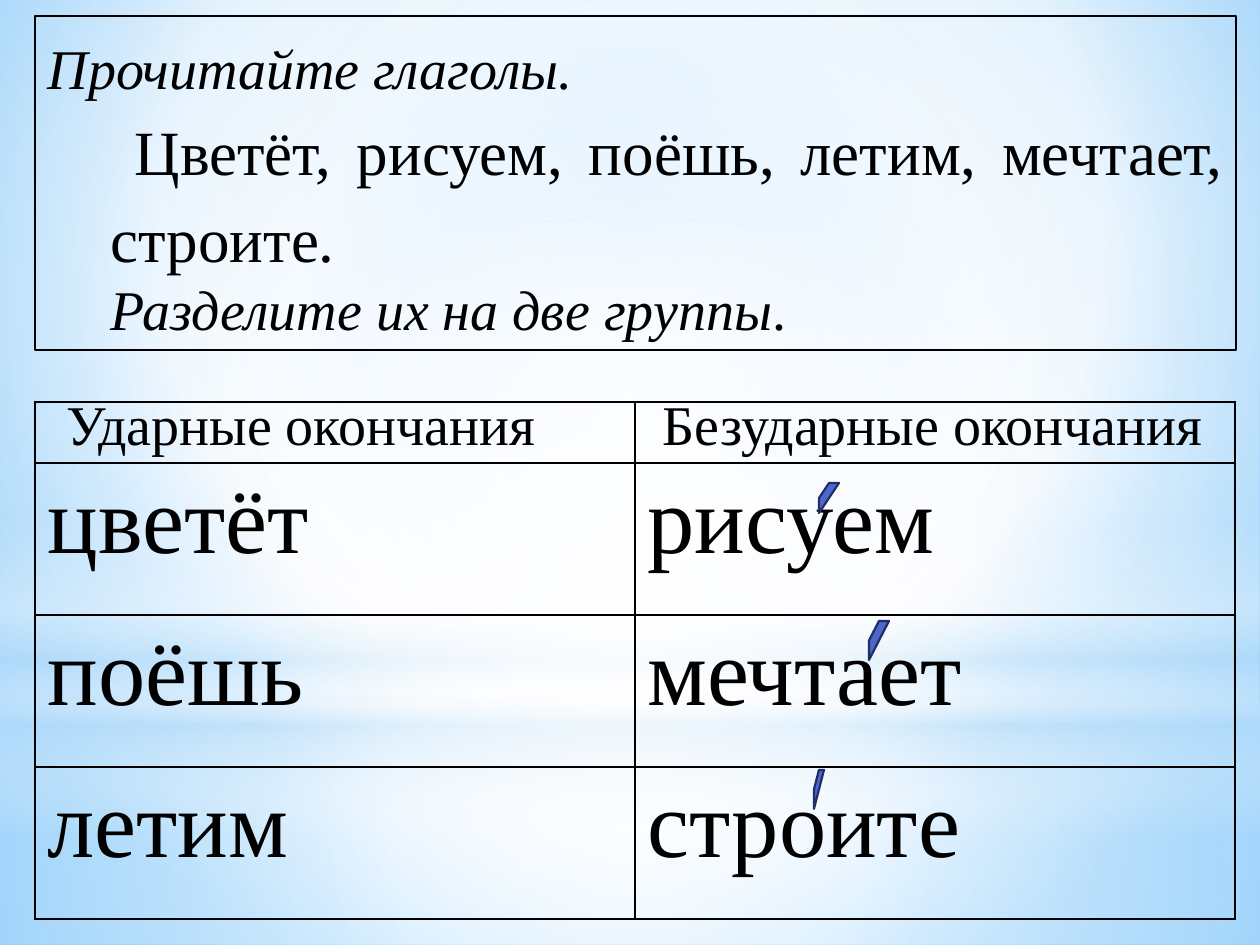
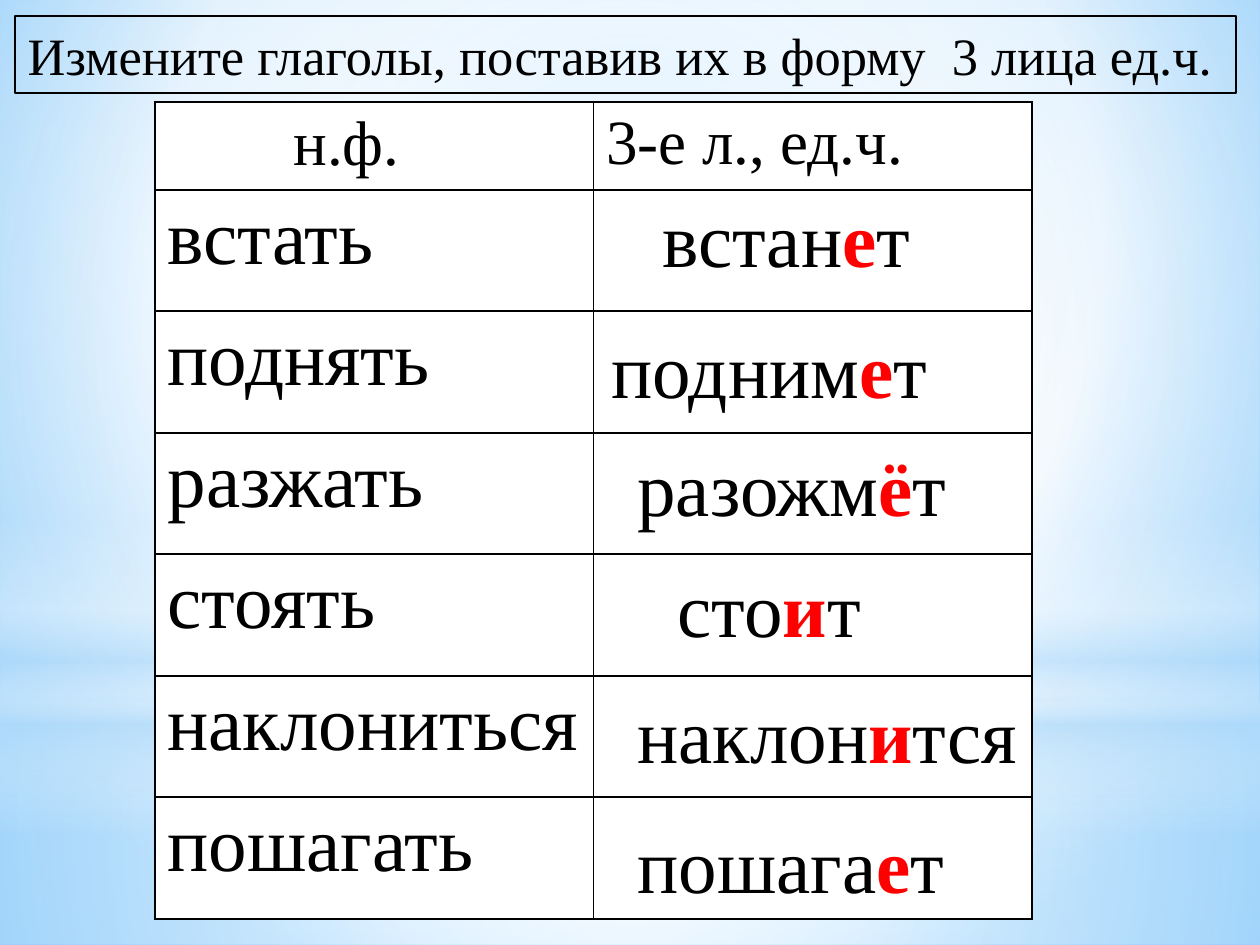
import pptx
import pptx.dml.color
import pptx.enum.shapes
import pptx.enum.text
import pptx.oxml
import pptx.oxml.ns
import pptx.util

PX = 914400 / 126
WIDTH, HEIGHT = 1260, 945
FONT = "Times New Roman"
COLOURS = {
    "text": "000000", "ending": "FF0000", "paper": "FFFFFF",
    "accent": "4E67C8", "accent_line": "1F2E69",
    "sky": "9ED5FF", "deep_sky": "5BB9FF", "haze": "B4DCFA",
}
ALIGN = pptx.enum.text.PP_ALIGN
SHAPE = pptx.enum.shapes.MSO_SHAPE
CENTRE = (50, 50, 50, 50)


def px(length):
    return pptx.util.Emu(round(length * PX))


def rgb(name):
    return pptx.dml.color.RGBColor.from_string(COLOURS[name])


def gradient(stops, focus=None):
    """Circular gradient around focus (left, top, right, bottom in %), or vertical without one."""
    marks = "".join(
        f'<a:gs pos="{place * 1000}"><a:srgbClr val="{COLOURS[name]}">'
        f'<a:alpha val="{alpha * 1000}"/></a:srgbClr></a:gs>'
        for place, name, alpha in stops)
    if focus:
        left, top, right, bottom = (side * 1000 for side in focus)
        course = (f'<a:path path="circle"><a:fillToRect l="{left}" t="{top}" '
                  f'r="{right}" b="{bottom}"/></a:path>')
    else:
        course = '<a:lin ang="5400000" scaled="0"/>'
    return pptx.oxml.parse_xml(
        f'<a:gradFill {pptx.oxml.ns.nsdecls("a")} rotWithShape="1">'
        f'<a:gsLst>{marks}</a:gsLst>{course}</a:gradFill>')


class SlideBuilder:
    def __init__(self):
        self.deck = pptx.Presentation()
        self.deck.slide_width, self.deck.slide_height = px(WIDTH), px(HEIGHT)
        self.page = None

    def new_page(self):
        self.page = self.deck.slides.add_slide(self.deck.slide_layouts[5])

    def shape(self, kind, box):
        shape = self.page.shapes.add_shape(kind, *map(px, box))
        shape.shadow.inherit = False
        return shape

    def swap_fill(self, fill, parent, stops, focus):
        fill.solid()
        solid = parent.find(pptx.oxml.ns.qn("a:solidFill"))
        parent.replace(solid, gradient(stops, focus))

    def backdrop(self, layers):
        """Put the sky and its light layers on the slide master."""
        master = self.deck.slide_master
        fill = master.background.fill
        fill.solid()
        holder = master.element.find(".//" + pptx.oxml.ns.qn("p:bgPr"))
        sky = [(0, "sky", 100), (60, "paper", 100), (100, "deep_sky", 100)]
        self.swap_fill(fill, holder, sky, (20, 10, 20, 60))
        for place, (kind, box, stops, focus) in enumerate(layers, 2):
            layer = self.shape(kind, box)
            layer.line.fill.background()
            self.swap_fill(layer.fill, layer.element.spPr, stops, focus)
            master.shapes.element.insert(place, layer.element)

    def add_text(self, para, spans, size, align=ALIGN.LEFT, italic=None):
        """Add (text, formats) spans to a paragraph with one common font."""
        para.alignment = align
        font = para.font
        font.name, font.size, font.italic = FONT, pptx.util.Pt(size), italic
        font.color.rgb = rgb("text")
        for text, formats in spans:
            span = para.add_run()
            span.text = text
            if "italic" in formats:
                span.font.italic = formats["italic"]
            if "colour" in formats:
                span.font.bold = True
                span.font.color.rgb = rgb(formats["colour"])

    def task(self, box, line_width):
        """Frame the title placeholder and return its text frame."""
        title = self.page.shapes.title
        title.left, title.top, title.width, title.height = map(px, box)
        title.line.color.rgb = rgb("text")
        title.line.width = pptx.util.Pt(line_width)
        frame = title.text_frame
        frame.auto_size = pptx.enum.text.MSO_AUTO_SIZE.NONE
        frame.vertical_anchor = pptx.enum.text.MSO_ANCHOR.MIDDLE
        return frame

    def label(self, box, spans, size):
        frame = self.page.shapes.add_textbox(*map(px, box)).text_frame
        frame.word_wrap = True
        self.add_text(frame.paragraphs[0], spans, size)

    def borders(self, cell):
        properties = cell._tc.get_or_add_tcPr()
        for place, side in enumerate("LRTB"):
            properties.insert(place, pptx.oxml.parse_xml(
                f'<a:ln{side} {pptx.oxml.ns.nsdecls("a")} w="12700"><a:solidFill>'
                f'<a:srgbClr val="{COLOURS["text"]}"/></a:solidFill></a:ln{side}>'))

    def table(self, left, top, width, heights, rows, sizes, fill=None):
        grid = self.page.shapes.add_table(
            len(rows), len(rows[0]), *map(px, (left, top, width, sum(heights)))).table
        grid.first_row = grid.horz_banding = False
        for line, height, words, size in zip(grid.rows, heights, rows, sizes):
            line.height = px(height)
            for cell, word in zip(line.cells, words):
                if fill:
                    cell.fill.solid()
                    cell.fill.fore_color.rgb = rgb(fill)
                else:
                    cell.fill.background()
                self.borders(cell)
                if word:
                    self.add_text(cell.text_frame.paragraphs[0], [(word, {})], size)

    def stress_mark(self, box):
        mark = self.shape(SHAPE.DIAGONAL_STRIPE, box)
        mark.fill.solid()
        mark.fill.fore_color.rgb = rgb("accent")
        mark.line.color.rgb = rgb("accent_line")
        mark.line.width = pptx.util.Pt(1.25)


def stress_page(builder):
    frame = builder.task((35, 16, 1201, 334), 1)
    first, verbs, last = frame.paragraphs[0], frame.add_paragraph(), frame.add_paragraph()
    builder.add_text(first, [("Прочитайте глаголы.", {})], 32, ALIGN.JUSTIFY, True)
    builder.add_text(verbs, [("Цветёт, рисуем, поёшь, летим, мечтает, строите.", {})],
                     36, ALIGN.JUSTIFY)
    builder.add_text(last, [("Разделите их на две группы", {"italic": True}),
                            (".", {"italic": False})], 32)
    first.line_spacing = verbs.line_spacing = 1.15
    indent = verbs._p.get_or_add_pPr()
    indent.set("marL", str(px(63)))
    indent.set("indent", str(px(24)))

    rows = [("", ""), ("цветёт", "рисуем"), ("поёшь", "мечтает"), ("летим", "строите")]
    builder.table(35, 402, 1200, [61] + [152] * 3, rows, [32] + [54] * 3)
    for box in ((819, 483, 20, 30), (869, 621, 20, 39), (814, 770, 10, 39)):
        builder.stress_mark(box)
    builder.label((54, 383, 546, 81), [("Ударные окончания", {})], 32)
    builder.label((650, 383, 610, 81), [("Безударные окончания", {})], 32)


def person_page(builder):
    frame = builder.task((15, 16, 1221, 77), 0.75)
    builder.add_text(frame.paragraphs[0],
                     [("Измените глаголы, поставив их в форму  3 лица ед.ч.", {})], 30)
    verbs = ["встать", "поднять", "разжать", "стоять", "наклониться", "пошагать"]
    rows = [("", "3-е л., ед.ч.")] + [(verb, "") for verb in verbs]
    builder.table(155, 102, 877, [88] + [121, 122] * 3, rows, [36] + [44] * 6, "paper")
    builder.label((281, 96, 149, 89), [("н.ф.", {})], 36)
    answers = [
        (650, 184, 276, "встан", "е", "т"), (599, 315, 344, "подним", "е", "т"),
        (625, 433, 338, "разожм", "ё", "т"), (665, 554, 210, "сто", "и", "т"),
        (625, 680, 407, "наклон", "и", "тся"), (625, 810, 348, "пошага", "е", "т"),
    ]
    for left, top, width, stem, vowel, tail in answers:
        spans = [(stem, {}), (vowel, {"colour": "ending"}), (tail, {})]
        builder.label((left, top, width, 106), spans, 44)


def main():
    builder = SlideBuilder()
    builder.new_page()
    builder.backdrop([
        (SHAPE.RECTANGLE, (0, 703, WIDTH, 242),
         [(0, "paper", 91), (37, "paper", 76), (100, "haze", 79)], CENTRE),
        (SHAPE.RECTANGLE, (0, 0, WIDTH, 703),
         [(0, "paper", 89), (48, "paper", 62), (100, "haze", 79)], CENTRE),
        (SHAPE.RECTANGLE, (0, 519, WIDTH, 315),
         [(0, "paper", 0), (29, "paper", 30), (45, "haze", 40),
          (55, "paper", 26), (65, "haze", 60), (100, "paper", 0)], None),
        (SHAPE.OVAL, (0, 220, WIDTH, 703),
         [(0, "paper", 100), (56, "paper", 0)], CENTRE),
    ])
    stress_page(builder)
    builder.new_page()
    person_page(builder)
    builder.deck.save("out.pptx")


if __name__ == "__main__":
    main()
